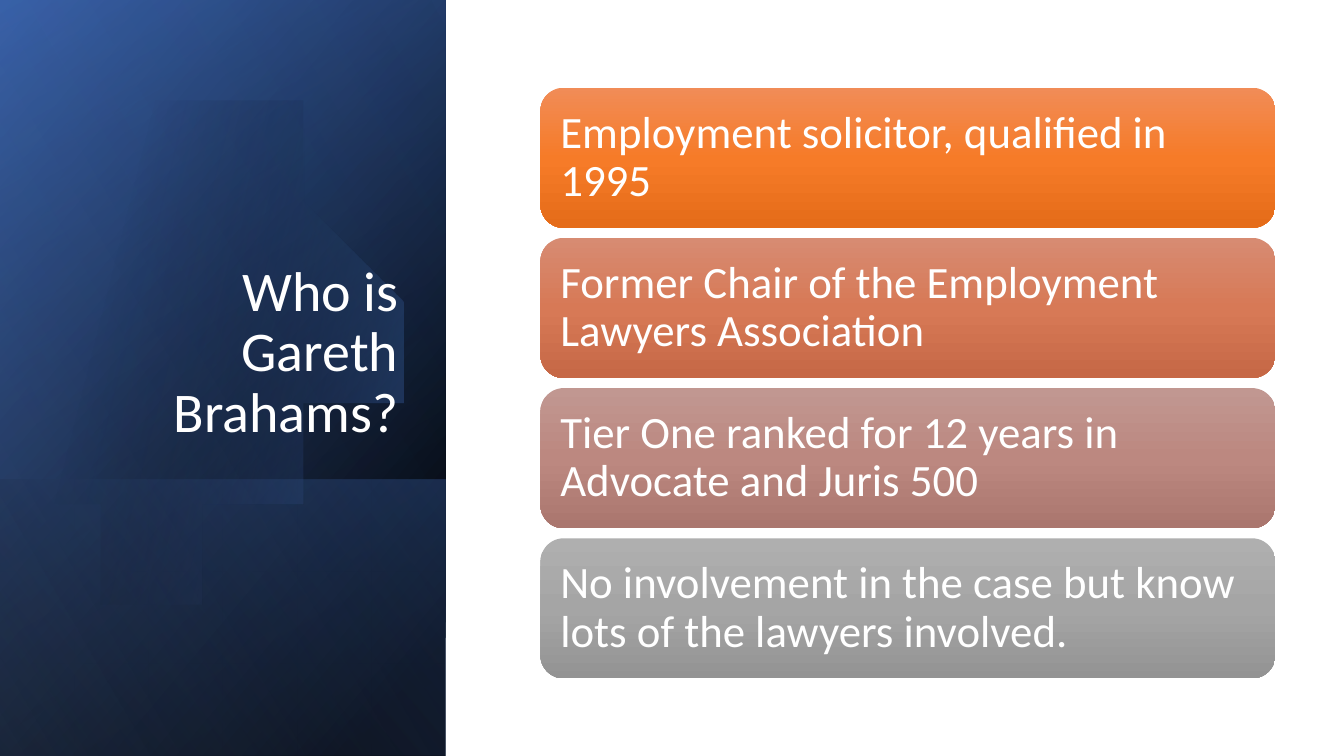
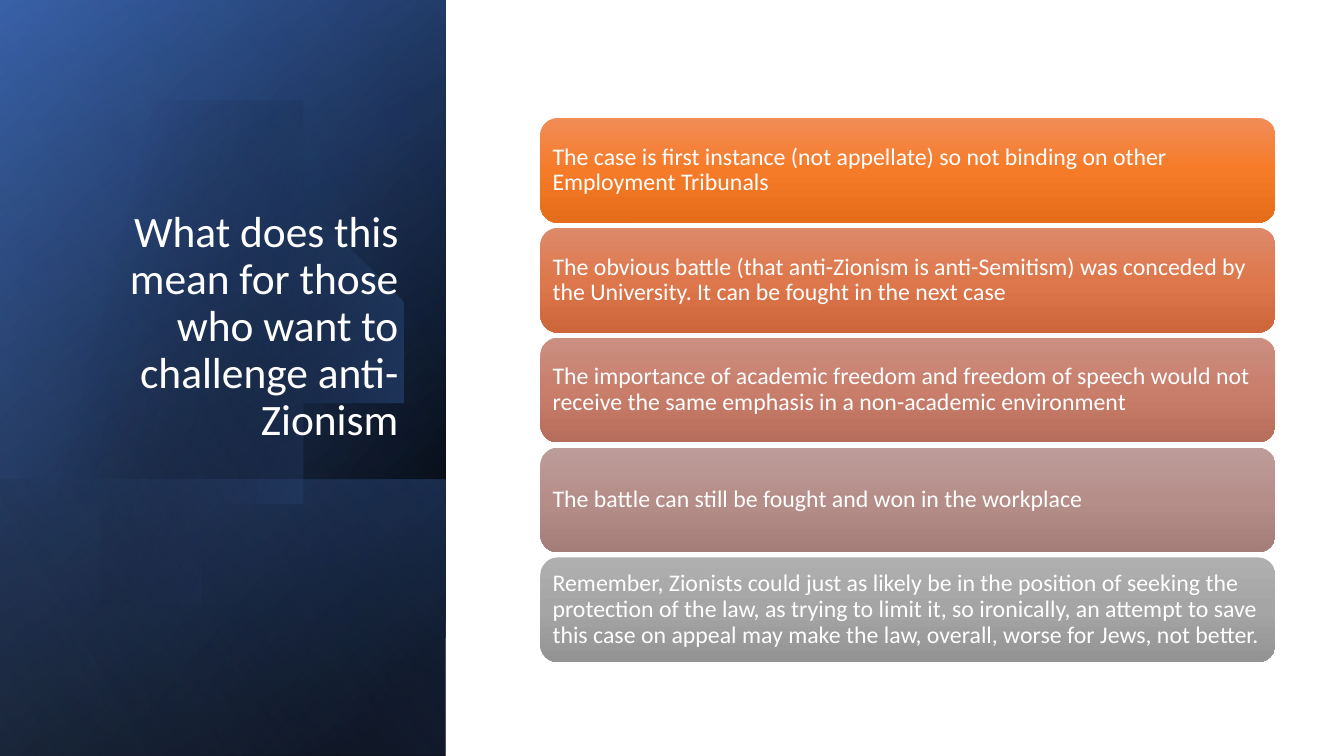
from dataclasses import dataclass
from typing import NamedTuple

from lxml import etree
from pptx import Presentation
from pptx.dml.color import RGBColor
from pptx.enum.shapes import MSO_SHAPE
from pptx.enum.text import MSO_ANCHOR, MSO_AUTO_SIZE, PP_ALIGN
from pptx.oxml.ns import qn
from pptx.shapes.autoshape import Shape
from pptx.slide import Slide
from pptx.util import Inches, Pt

RECTANGLE = MSO_SHAPE.RECTANGLE
ROUNDED_RECTANGLE = MSO_SHAPE.ROUNDED_RECTANGLE
ANCHOR_BOTTOM, ANCHOR_MIDDLE = MSO_ANCHOR.BOTTOM, MSO_ANCHOR.MIDDLE
ALIGN_LEFT, ALIGN_RIGHT = PP_ALIGN.LEFT, PP_ALIGN.RIGHT
NO_AUTOFIT = MSO_AUTO_SIZE.NONE
TITLE_ONLY = 5

SLIDE_WIDTH, SLIDE_HEIGHT = 13.33, 7.5
PANEL_WIDTH = 4.42
LOWER_BAND_HEIGHT = 2.74
CARD_LEFT, CARD_WIDTH = 5.36, 7.29
CURVE_STEPS = 24


class Stop(NamedTuple):
    position: int
    color: str
    opacity: int = 100


class Gradient(NamedTuple):
    angle: int
    stops: tuple[Stop, ...]


class Layer(NamedTuple):
    """A full-width gradient in the side panel, from top down."""
    top: float
    height: float
    gradient: Gradient


class Point(NamedTuple):
    x: float
    y: float


class Box(NamedTuple):
    left: float
    top: float
    width: float
    height: float


def card_gradient(light: str, middle: str, dark: str) -> Gradient:
    return Gradient(90, (Stop(0, light), Stop(50, middle), Stop(100, dark)))


@dataclass(frozen=True)
class Theme:
    font: str = "Calibri"
    text: RGBColor = RGBColor(0xFF, 0xFF, 0xFF)
    line_spacing: float = 0.9
    title_box: Box = Box(0.64, 1.84, 3.41, 2.62)
    base: Gradient = Gradient(50, (Stop(8, "000000"), Stop(100, "2F5597")))
    glow: Gradient = Gradient(30, (Stop(0, "000000", 0), Stop(99, "4472C4", 46)))
    band: Gradient = Gradient(130, (Stop(2, "4472C4", 29), Stop(100, "000000", 30)))
    disc: Gradient = Gradient(14, (Stop(29, "000000", 0), Stop(100, "4472C4", 43)))
    sheen: Gradient = Gradient(120, (Stop(0, "000000", 0), Stop(99, "8FAADC", 11)))
    orange: Gradient = card_gradient("F18C57", "F67B28", "E56C19")
    coral: Gradient = card_gradient("DD8A6A", "DE774B", "CD673B")
    terracotta: Gradient = card_gradient("D78B72", "D77956", "C66846")
    rose: Gradient = card_gradient("CB8F81", "C97E6B", "B76D5B")
    dusty: Gradient = card_gradient("C19791", "BC8880", "AA766E")
    mauve: Gradient = card_gradient("BC9C99", "B68E89", "A47C78")
    gray: Gradient = card_gradient("AFAFAF", "A5A5A5", "939393")


THEME = Theme()

LAYERS_BELOW_DISC = (
    Layer(0, SLIDE_HEIGHT, THEME.base),
    Layer(0, SLIDE_HEIGHT, THEME.glow),
    Layer(SLIDE_HEIGHT - LOWER_BAND_HEIGHT, LOWER_BAND_HEIGHT, THEME.band),
)
LAYER_ABOVE_DISC = Layer(0, SLIDE_HEIGHT, THEME.sheen)

# Each segment holds one end point, or two control points and an end point.
DISC_START = Point(1.49, 1.1)
DISC_SEGMENTS = (
    (Point(2.46, 1.12), Point(3.35, 1.77), Point(3.63, 2.75)),
    (Point(3.98, 3.97), Point(3.28, 5.23), Point(2.07, 5.58)),
    (Point(1.31, 5.8), Point(0.53, 5.61), Point(-0.03, 5.14)),
    (Point(-0.15, 5.03),),
    (Point(-0.15, 1.75),),
    (Point(0, 1.61),),
    (Point(0.23, 1.42), Point(0.5, 1.28), Point(0.8, 1.19)),
    (Point(1.03, 1.13), Point(1.26, 1.1), DISC_START),
)


class Card(NamedTuple):
    text: str
    gradient: Gradient


@dataclass(frozen=True)
class CardSlide:
    title: str
    title_size: int
    card_size: int
    top: float
    card_height: float
    pitch: float
    inset: float
    cards: tuple[Card, ...]


CARD_SLIDES = (
    CardSlide(
        title="Who is Gareth Brahams?", title_size=40, card_size=32,
        top=0.87, card_height=1.39, pitch=1.49, inset=0.13,
        cards=(
            Card("Employment solicitor, qualified in 1995", THEME.orange),
            Card("Former Chair of the Employment Lawyers Association", THEME.terracotta),
            Card("Tier One ranked for 12 years in Advocate and Juris 500", THEME.dusty),
            Card("No involvement in the case but know lots of the lawyers involved.",
                 THEME.gray),
        ),
    ),
    CardSlide(
        title="What does this mean for those who want to challenge anti-Zionism",
        title_size=31, card_size=17,
        top=1.17, card_height=1.04, pitch=1.09, inset=0.07,
        cards=(
            Card("The case is first instance (not appellate) so not binding on other "
                 "Employment Tribunals", THEME.orange),
            Card("The obvious battle (that anti-Zionism is anti-Semitism) was conceded by "
                 "the University. It can be fought in the next case", THEME.coral),
            Card("The importance of academic freedom and freedom of speech would not "
                 "receive the same emphasis in a non-academic environment", THEME.rose),
            Card("The battle can still be fought and won in the workplace", THEME.mauve),
            Card("Remember, Zionists could just as likely be in the position of seeking the "
                 "protection of the law, as trying to limit it, so ironically, an attempt to "
                 "save this case on appeal may make the law, overall, worse for Jews, not "
                 "better.", THEME.gray),
        ),
    ),
)


def paint(shape: Shape, gradient: Gradient) -> None:
    """Give the shape a gradient fill with opacities, and no line or shadow."""
    shape.shadow.inherit = False
    shape.line.fill.background()
    shape.fill.background()
    fill = etree.Element(qn("a:gradFill"), rotWithShape="1")
    stop_list = etree.SubElement(fill, qn("a:gsLst"))
    for stop in gradient.stops:
        entry = etree.SubElement(stop_list, qn("a:gs"), pos=str(stop.position * 1000))
        color = etree.SubElement(entry, qn("a:srgbClr"), val=stop.color)
        if stop.opacity < 100:
            etree.SubElement(color, qn("a:alpha"), val=str(stop.opacity * 1000))
    etree.SubElement(fill, qn("a:lin"), ang=str(gradient.angle * 60000), scaled="0")
    properties = shape._element.spPr
    properties.replace(properties.find(qn("a:noFill")), fill)


def add_box(slide: Slide, kind: MSO_SHAPE, box: Box, gradient: Gradient) -> Shape:
    shape = slide.shapes.add_shape(kind, *(Inches(length) for length in box))
    paint(shape, gradient)
    return shape


def add_layer(slide: Slide, layer: Layer) -> None:
    """Draw the layer as a mirrored rectangle turned a quarter, so its gradient turns too."""
    center_x, center_y = PANEL_WIDTH / 2, layer.top + layer.height / 2
    box = Box(center_x - layer.height / 2, center_y - PANEL_WIDTH / 2,
              layer.height, PANEL_WIDTH)
    shape = add_box(slide, RECTANGLE, box, layer.gradient)
    shape.rotation = 90
    shape._element.spPr.find(qn("a:xfrm")).set("flipH", "1")


def curve_point(start: Point, first: Point, second: Point, end: Point, t: float) -> Point:
    weights = ((1 - t) ** 3, 3 * t * (1 - t) ** 2, 3 * t ** 2 * (1 - t), t ** 3)
    points = (start, first, second, end)
    return Point(sum(w * p.x for w, p in zip(weights, points)),
                 sum(w * p.y for w, p in zip(weights, points)))


def disc_outline() -> list[Point]:
    outline = [DISC_START]
    for segment in DISC_SEGMENTS:
        if len(segment) == 1:
            outline.append(segment[0])
        else:
            start = outline[-1]
            outline += [curve_point(start, *segment, step / CURVE_STEPS)
                        for step in range(1, CURVE_STEPS + 1)]
    return outline


def add_disc(slide: Slide) -> None:
    start, *rest = disc_outline()
    builder = slide.shapes.build_freeform(start.x, start.y, scale=Inches(1))
    builder.add_line_segments(rest, close=True)
    paint(builder.convert_to_shape(), THEME.disc)


def add_panel(slide: Slide) -> None:
    for layer in LAYERS_BELOW_DISC:
        add_layer(slide, layer)
    add_disc(slide)
    add_layer(slide, LAYER_ABOVE_DISC)


def set_text(shape: Shape, text: str, size: int, alignment: PP_ALIGN,
             anchor: MSO_ANCHOR) -> None:
    frame = shape.text_frame
    frame.text = text
    frame.word_wrap = True
    frame.auto_size = NO_AUTOFIT
    frame.vertical_anchor = anchor
    paragraph = frame.paragraphs[0]
    paragraph.alignment = alignment
    paragraph.line_spacing = THEME.line_spacing
    paragraph.font.name = THEME.font
    paragraph.font.size = Pt(size)
    paragraph.font.color.rgb = THEME.text


def place_title(slide: Slide, text: str, size: int) -> None:
    """Format the title and bring it in front of the panel."""
    title = slide.shapes.title
    title.left, title.top, title.width, title.height = (
        Inches(length) for length in THEME.title_box)
    set_text(title, text, size, ALIGN_RIGHT, ANCHOR_BOTTOM)
    slide.shapes._spTree.append(title._element)


def add_cards(slide: Slide, content: CardSlide) -> None:
    for row, card in enumerate(content.cards):
        box = Box(CARD_LEFT, content.top + row * content.pitch,
                  CARD_WIDTH, content.card_height)
        shape = add_box(slide, ROUNDED_RECTANGLE, box, card.gradient)
        set_text(shape, card.text, content.card_size, ALIGN_LEFT, ANCHOR_MIDDLE)
        frame = shape.text_frame
        frame.margin_left = frame.margin_right = Inches(content.inset)
        frame.margin_top = frame.margin_bottom = Inches(content.inset)


def main() -> None:
    presentation = Presentation()
    presentation.slide_width = Inches(SLIDE_WIDTH)
    presentation.slide_height = Inches(SLIDE_HEIGHT)
    for content in CARD_SLIDES:
        slide = presentation.slides.add_slide(presentation.slide_layouts[TITLE_ONLY])
        add_panel(slide)
        place_title(slide, content.title, content.title_size)
        add_cards(slide, content)
    presentation.save("out.pptx")


if __name__ == "__main__":
    main()
